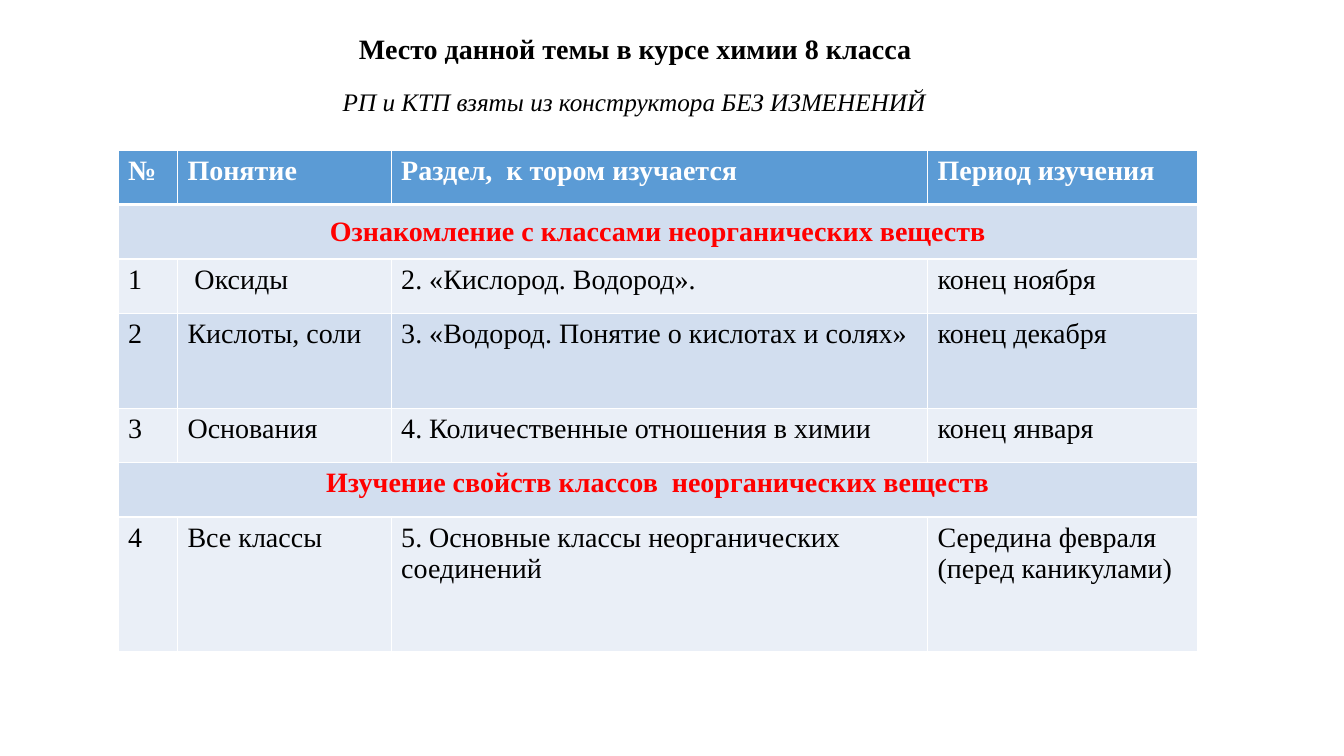
import pptx
import pptx.util
import pptx.dml.color
import pptx.enum.text
import lxml.etree

Inches = pptx.util.Inches
Pt = pptx.util.Pt
ALIGN = pptx.enum.text.PP_ALIGN
ANCHOR = pptx.enum.text.MSO_ANCHOR
FONT = "Times New Roman"
COLORS = {"header": "5B9BD5", "dark band": "D2DEEF", "light band": "EAEFF7",
          "border": "FFFFFF", "header text": "FFFFFF", "text": "000000",
          "section": "FF0000"}
DRAWING = "http://schemas.openxmlformats.org/drawingml/2006/main"


def style_paragraph(paragraph, size, color, bold=False, italic=False, align=ALIGN.LEFT):
    paragraph.alignment = align
    font = paragraph.font
    font.name, font.size, font.bold, font.italic = FONT, Pt(size), bold, italic
    font.color.rgb = pptx.dml.color.RGBColor.from_string(COLORS[color])


def add_borders(cell, bottom_width):
    """Draw white cell borders; call before filling the cell."""
    properties = cell._tc.get_or_add_tcPr()
    for side in "LRTB":
        width = bottom_width if side == "B" else 1
        line = lxml.etree.SubElement(properties, f"{{{DRAWING}}}ln{side}", w=str(Pt(width)))
        fill = lxml.etree.SubElement(line, f"{{{DRAWING}}}solidFill")
        lxml.etree.SubElement(fill, f"{{{DRAWING}}}srgbClr", val=COLORS["border"])


presentation = pptx.Presentation()
presentation.slide_width = Inches(13.33)
presentation.slide_height = Inches(7.5)
slide = presentation.slides.add_slide(presentation.slide_layouts[5])

# Headings
title = slide.shapes.title
title.left, title.top, title.width, title.height = map(Inches, (3.46, 0.26, 5.76, 0.44))
subtitle = slide.shapes.add_textbox(*map(Inches, (3.3, 0.81, 6.08, 0.4)))
title.text_frame.text = "Место данной темы в курсе химии 8 класса"
subtitle.text_frame.text = "РП и КТП взяты из конструктора БЕЗ ИЗМЕНЕНИЙ"
for shape in (title, subtitle):
    shape.text_frame.word_wrap = True
    shape.text_frame.auto_size = pptx.enum.text.MSO_AUTO_SIZE.NONE
style_paragraph(title.text_frame.paragraphs[0], 20, "text", bold=True)
style_paragraph(subtitle.text_frame.paragraphs[0], 18, "text", italic=True)

# Table: a row with a single entry is a section heading across all columns
rows = [
    ("№", "Понятие", "Раздел,  к тором изучается", "Период изучения"),
    ("Ознакомление с классами неорганических веществ",),
    ("1", " Оксиды", "2. «Кислород. Водород».", "конец ноября"),
    ("2", "Кислоты, соли", "3. «Водород. Понятие о кислотах и солях»", "конец декабря"),
    ("3", "Основания", "4. Количественные отношения в химии", "конец января"),
    ("Изучение свойств классов  неорганических веществ",),
    ("4", "Все классы", "5. Основные классы неорганических соединений",
     "Середина февраля (перед каникулами)"),
]
column_widths = [0.59, 2.12, 5.32, 2.68]
row_heights = [0.54, 0.54, 0.54, 0.94, 0.54, 0.54, 1.34]
table = slide.shapes.add_table(
    len(rows), len(column_widths), Inches(1.17), Inches(1.49),
    Inches(sum(column_widths)), Inches(sum(row_heights))).table
for column, width in zip(table.columns, column_widths):
    column.width = Inches(width)
for row, height in zip(table.rows, row_heights):
    row.height = Inches(height)

for row_index, texts in enumerate(rows):
    is_header = row_index == 0
    is_section = len(texts) == 1
    band = "header" if is_header else "dark band" if row_index % 2 else "light band"
    text_color = "header text" if is_header else "section" if is_section else "text"
    for cell in table.rows[row_index].cells:
        add_borders(cell, 3 if is_header else 1)
        cell.fill.solid()
        cell.fill.fore_color.rgb = pptx.dml.color.RGBColor.from_string(COLORS[band])
    if is_section:
        table.cell(row_index, 0).merge(table.cell(row_index, len(column_widths) - 1))
    for column_index, text in enumerate(texts):
        cell = table.cell(row_index, column_index)
        cell.text = text
        style_paragraph(cell.text_frame.paragraphs[0], 20, text_color,
                        bold=is_header or is_section,
                        align=ALIGN.CENTER if is_section else ALIGN.LEFT)
table.cell(1, 0).vertical_anchor = ANCHOR.MIDDLE

presentation.save("out.pptx")
